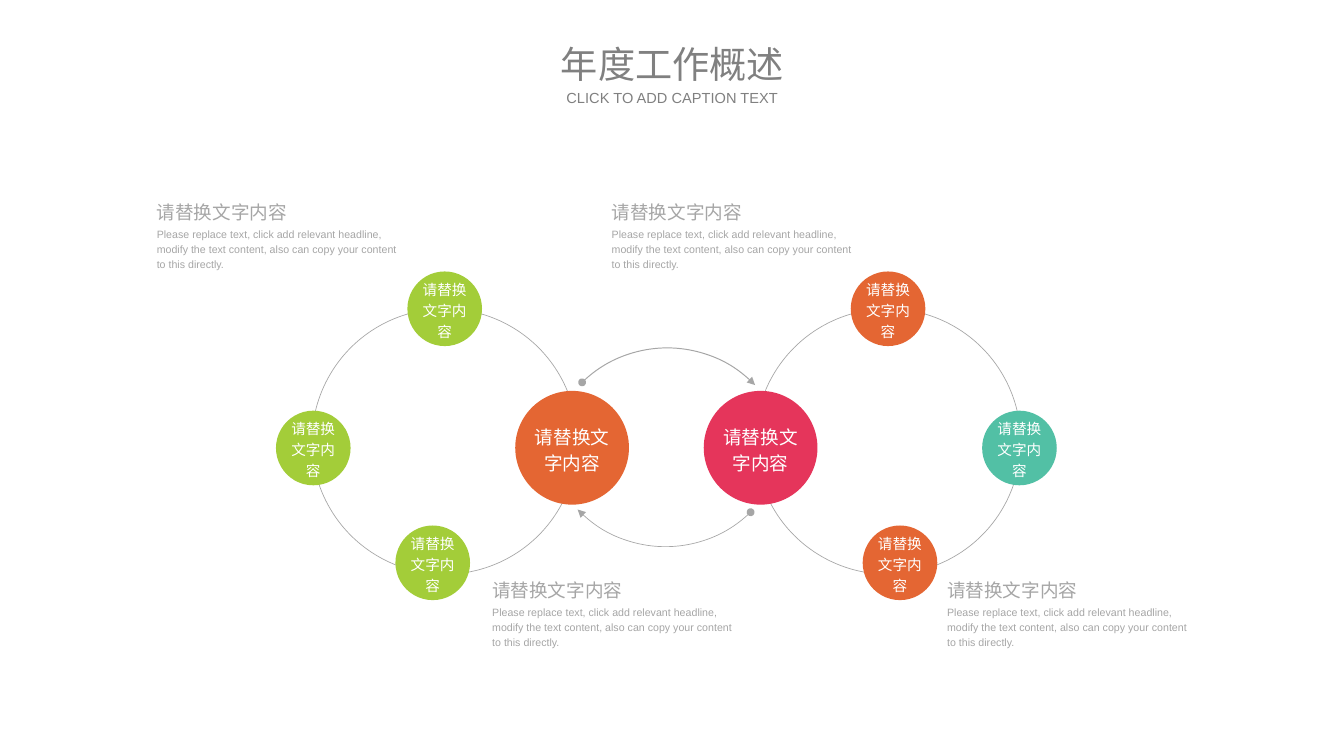
from lxml.etree import SubElement
from pptx import Presentation
from pptx.dml.color import RGBColor
from pptx.enum.shapes import MSO_SHAPE
from pptx.enum.text import MSO_ANCHOR, MSO_AUTO_SIZE, PP_ALIGN
from pptx.oxml.ns import qn
from pptx.util import Pt

COLORS = {
    "orange": "E46633",
    "green": "A3CD39",
    "pink": "E5355B",
    "teal": "52C0A5",
    "grey": "A6A6A6",
    "title": "808080",
    "white": "FFFFFF",
}
TOPIC = "请替换文字内容"
DETAIL = (
    "Please replace text, click add relevant headline, modify the text content, "
    "also can copy your content to this directly."
)


class Board:
    def __init__(self, slide, font):
        self.slide = slide
        self.font = font

    def color(self, name):
        return RGBColor.from_string(COLORS[name])

    def fill_text(self, frame, text, size, color, align, spacing):
        frame.margin_left = frame.margin_right = 0
        frame.margin_top = frame.margin_bottom = 0
        paragraph = frame.paragraphs[0]
        paragraph.alignment = align
        paragraph.line_spacing = spacing
        run = paragraph.add_run()
        run.text = text
        run.font.name = self.font
        run.font.size = Pt(size)
        run.font.color.rgb = self.color(color)

    def round_shape(self, preset, x, y, diameter):
        shape = self.slide.shapes.add_shape(
            preset, Pt(x - diameter / 2), Pt(y - diameter / 2), Pt(diameter), Pt(diameter)
        )
        shape.shadow.inherit = False
        return shape

    def outline(self, shape, width):
        shape.fill.background()
        shape.line.color.rgb = self.color("grey")
        shape.line.width = Pt(width)

    def ring(self, x, y, diameter):
        self.outline(self.round_shape(MSO_SHAPE.OVAL, x, y, diameter), 0.5)

    def bubble(self, x, y, diameter, color, size):
        bubble = self.round_shape(MSO_SHAPE.OVAL, x, y, diameter)
        bubble.fill.solid()
        bubble.fill.fore_color.rgb = self.color(color)
        bubble.line.fill.background()
        frame = bubble.text_frame
        frame.word_wrap = True
        frame.vertical_anchor = MSO_ANCHOR.MIDDLE
        self.fill_text(frame, TOPIC, size, "white", PP_ALIGN.CENTER, 1.2)

    def arc_arrow(self, x, y, diameter, rotation, width):
        arc = self.round_shape(MSO_SHAPE.ARC, x, y, diameter)
        arc.rotation = rotation
        self.outline(arc, width)
        line = arc.element.spPr.find(qn("a:ln"))
        for end, kind in (("a:headEnd", "oval"), ("a:tailEnd", "triangle")):
            SubElement(line, qn(end), type=kind)

    def text(self, x, y, width, height, text, size, color="grey",
             align=PP_ALIGN.LEFT, anchor=MSO_ANCHOR.TOP, spacing=1.2, wrap=True):
        frame = self.slide.shapes.add_textbox(Pt(x), Pt(y), Pt(width), Pt(height)).text_frame
        frame.word_wrap = wrap
        frame.auto_size = MSO_AUTO_SIZE.SHAPE_TO_FIT_TEXT
        frame.vertical_anchor = anchor
        self.fill_text(frame, text, size, color, align, spacing)

    def heading(self, y, height, text, size):
        self.text(415.4, y, 182.2, height, text, size, "title",
                  PP_ALIGN.CENTER, MSO_ANCHOR.MIDDLE, 1.0)

    def caption(self, x, y):
        self.text(x, y + 21.3, 185.8, 34.6, DETAIL, 8)
        self.text(x, y, 98.6, 20.2, TOPIC, 14, wrap=False)

    def cycle(self, axis, side, hub, outer, top, bottom):
        ring_x = axis + side * 167
        self.ring(ring_x, 332.6, 200)
        self.bubble(axis + side * 71, 337.3, 85.7, hub, 14)
        for x, y, color in (
            (axis + side * 266, 337.5, outer),
            (ring_x, 232.6, top),
            (axis + side * 176, 424, bottom),
        ):
            self.bubble(x, y, 56.2, color, 11)


def main():
    presentation = Presentation()
    presentation.slide_width = Pt(1012.5)
    presentation.slide_height = Pt(569.5)
    slide = presentation.slides.add_slide(presentation.slide_layouts[6])
    board = Board(slide, "Arial")

    axis = 502
    board.cycle(axis, -1, "orange", "green", "green", "green")
    board.cycle(axis, 1, "pink", "teal", "orange", "orange")
    board.arc_arrow(axis + 0.7, 354.2, 184.3, 315.9, 0.75)
    board.arc_arrow(axis - 0.7, 319.7, 184.3, 135.9, 0.5)

    for left, y in ((118.1, 148.2), (370.8, 432.9)):
        for x in (left, left + 342.7):
            board.caption(x, y)

    board.heading(30.2, 35.3, "年度工作概述", 28)
    board.heading(67, 13.7, "CLICK TO ADD CAPTION TEXT", 11)
    presentation.save("out.pptx")


if __name__ == "__main__":
    main()
